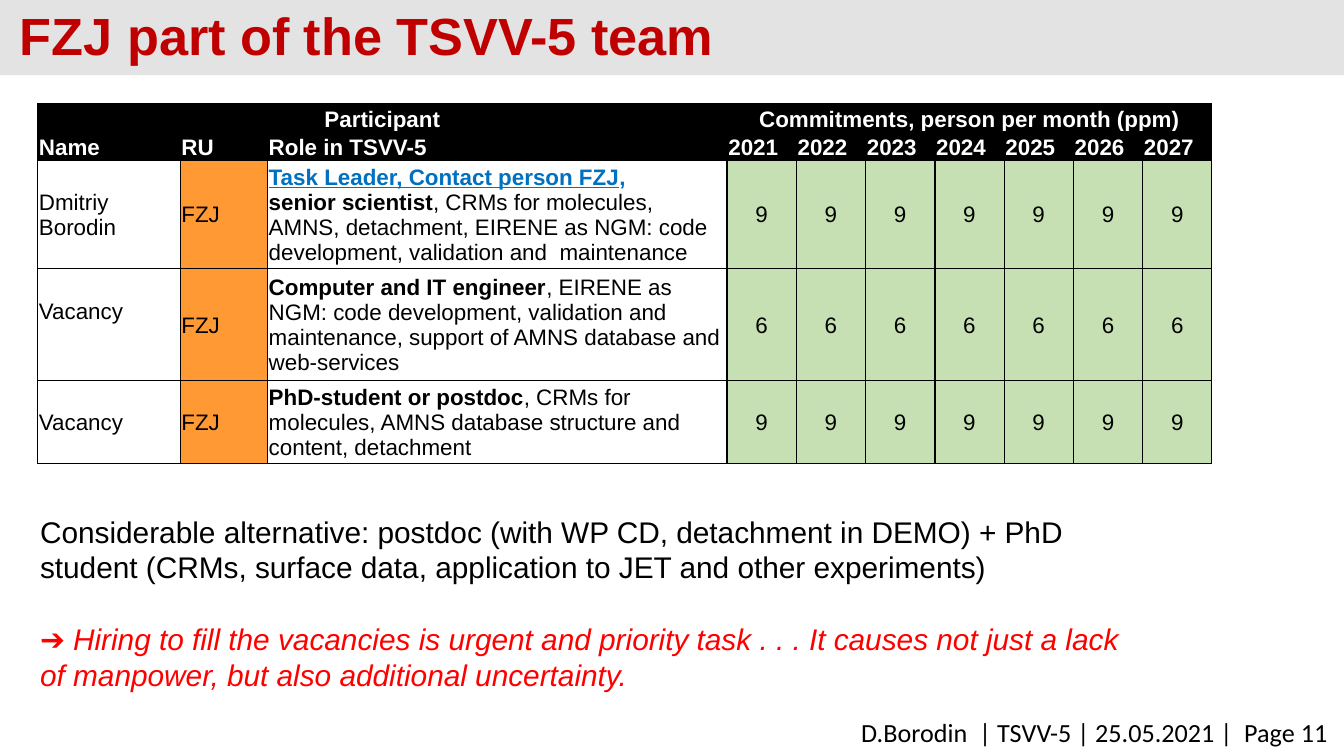
from lxml import etree
from pptx import Presentation
from pptx.dml.color import RGBColor
from pptx.enum import shapes, text
from pptx.oxml import ns
from pptx.util import Inches, Pt

BLACK, WHITE, GREEN, ORANGE = "000000", "FFFFFF", "C6E0B4", "FF9933"
YEARS = range(2021, 2028)
HEADINGS = ["Name", "RU", "Role in TSVV-5", *map(str, YEARS)]
HEAVY_EDGES = (3, 6, 8)
LEADER = {"bold": True, "color": "0070C0"}
MEMBERS = [
    ("Dmitriy \vBorodin",
     [("Task Leader, Contact person FZJ", {**LEADER, "underline": True}),
      (", \v", LEADER),
      ("senior scientist", {"bold": True}),
      (", CRMs for molecules, AMNS, detachment, EIRENE as NGM: code "
       "development, validation and  maintenance", {})], 9),
    ("Vacancy\v",
     [("Computer and IT engineer", {"bold": True}),
      (", EIRENE as NGM: code development, validation and  maintenance, "
       "support of AMNS database and web-services", {})], 6),
    ("Vacancy",
     [("PhD-student or postdoc", {"bold": True}),
      (", CRMs for molecules, AMNS database structure and content, "
       "detachment", {})], 9),
]


def rgb(value):
    return RGBColor.from_string(value)


def add_break(paragraph, size):
    paragraph.add_line_break()
    etree.SubElement(paragraph._p[-1], ns.qn("a:rPr"), sz=str(size * 100))


def write(paragraph, words, size=12, font="Arial", color=BLACK, bold=False,
          italic=False, underline=False, align=text.PP_ALIGN.LEFT):
    paragraph.alignment = align
    for index, line in enumerate(words.split("\v")):
        if index:
            add_break(paragraph, size)
        if not line:
            continue
        run = paragraph.add_run()
        run.text = line
        run.font.size, run.font.name = Pt(size), font
        run.font.bold, run.font.italic = bold, italic
        run.font.underline = underline
        run.font.color.rgb = rgb(color)


def add_text_frame(slide, left, top, width, height):
    frame = slide.shapes.add_textbox(
        Inches(left), Inches(top), Inches(width), Inches(height)).text_frame
    frame.word_wrap = True
    return frame


def add_title_band(slide):
    band = slide.shapes.add_shape(
        shapes.MSO_SHAPE.RECTANGLE, 0, 0, Inches(10), Inches(0.56))
    band.shadow.inherit = False
    band.fill.solid()
    band.fill.fore_color.rgb = rgb("E3E3E3")
    band.line.fill.background()


def style_cell(cell, fill, anchor, edges):
    cell.margin_left = cell.margin_right = cell.margin_top = Inches(0.01)
    cell.margin_bottom = 0
    cell.vertical_anchor = anchor
    properties = cell._tc.get_or_add_tcPr()
    for side, weight in edges.items():
        edge = etree.SubElement(properties, ns.qn(f"a:ln{side}"), w=str(Pt(weight)))
        paint = etree.SubElement(edge, ns.qn("a:solidFill"))
        etree.SubElement(paint, ns.qn("a:srgbClr"), val=BLACK)
    if fill:
        cell.fill.solid()
        cell.fill.fore_color.rgb = rgb(fill)
    else:
        cell.fill.background()


def style_table(team):
    for row in range(len(team.rows)):
        for column in range(len(team.columns)):
            header = row < 2
            fill = BLACK if header else (None, ORANGE, None)[column] if column < 3 else GREEN
            anchor = text.MSO_ANCHOR.BOTTOM if header else text.MSO_ANCHOR.MIDDLE
            edges = {
                "L": 1 if not header and column in HEAVY_EDGES else 0.5,
                "R": 1 if not header and column + 1 in HEAVY_EDGES else 0.5,
                "T": 1 if row == 1 else 0.5,
                "B": 1 if row == 0 else 0.5,
            }
            style_cell(team.cell(row, column), fill, anchor, edges)


def add_team_table(slide):
    row_heights = [0.21, 0.21, 0.8, 0.83, 0.62]
    text_widths = [1.06, 0.65, 3.42]
    width = 8.74
    year_width = (width - sum(text_widths)) / len(YEARS)
    column_widths = text_widths + [year_width] * len(YEARS)
    team = slide.shapes.add_table(
        len(row_heights), len(column_widths), Inches(0.28), Inches(0.77),
        Inches(width), Inches(sum(row_heights))).table
    for column, column_width in zip(team.columns, column_widths):
        column.width = Inches(column_width)
    for row, height in zip(team.rows, row_heights):
        row.height = Inches(height)
    style_table(team)

    def fill_in(row, column, words, **style):
        write(team.cell(row, column).text_frame.paragraphs[0], words, **style)

    team.cell(0, 0).merge(team.cell(0, 2))
    team.cell(0, 3).merge(team.cell(0, 9))
    heading = {"color": WHITE, "bold": True}
    center = text.PP_ALIGN.CENTER
    fill_in(0, 0, "Participant", align=center, **heading)
    fill_in(0, 3, "Commitments, person per month (ppm)", align=center, **heading)
    for column, words in enumerate(HEADINGS):
        fill_in(1, column, words, **heading)
    for row, (name, role, months) in enumerate(MEMBERS, start=2):
        fill_in(row, 0, name)
        fill_in(row, 1, "FZJ")
        for words, style in role:
            fill_in(row, 2, words, **style)
        for column in range(3, len(HEADINGS)):
            fill_in(row, column, str(months), align=center)


def add_remarks(slide):
    remarks = add_text_frame(slide, 0.2, 3.77, 8.5, 1.45)
    write(remarks.paragraphs[0],
          "Considerable alternative: postdoc (with WP CD, detachment in DEMO) + PhD "
          "student (CRMs, surface data, application to JET and other experiments)",
          size=16)
    hiring = remarks.add_paragraph()
    hiring.space_before = Pt(19)
    write(hiring,
          "➔ Hiring to fill the vacancies is urgent and priority task . . . "
          "It causes not just a lack \tof manpower, but also additional uncertainty.",
          size=16, color="FF0000", italic=True)


def main():
    deck = Presentation()
    deck.slide_width = Inches(10)
    deck.slide_height = deck.slide_width * 9 // 16
    slide = deck.slides.add_slide(deck.slide_layouts[6])
    add_title_band(slide)
    footer = add_text_frame(slide, 1.99, 5.28, 7.99, 0.34)
    write(footer.paragraphs[0], "D.Borodin  | TSVV-5 | 25.05.2021 |  Page 11",
          size=14, font="Calibri", align=text.PP_ALIGN.RIGHT)
    title = add_text_frame(slide, 0.05, 0.08, 9.17, 0.38)
    title.vertical_anchor = text.MSO_ANCHOR.MIDDLE
    title.paragraphs[0].line_spacing = Pt(32)
    write(title.paragraphs[0], "FZJ part of the TSVV-5 team",
          size=28, color="C00000", bold=True)
    add_team_table(slide)
    add_remarks(slide)
    deck.save("out.pptx")


if __name__ == "__main__":
    main()
